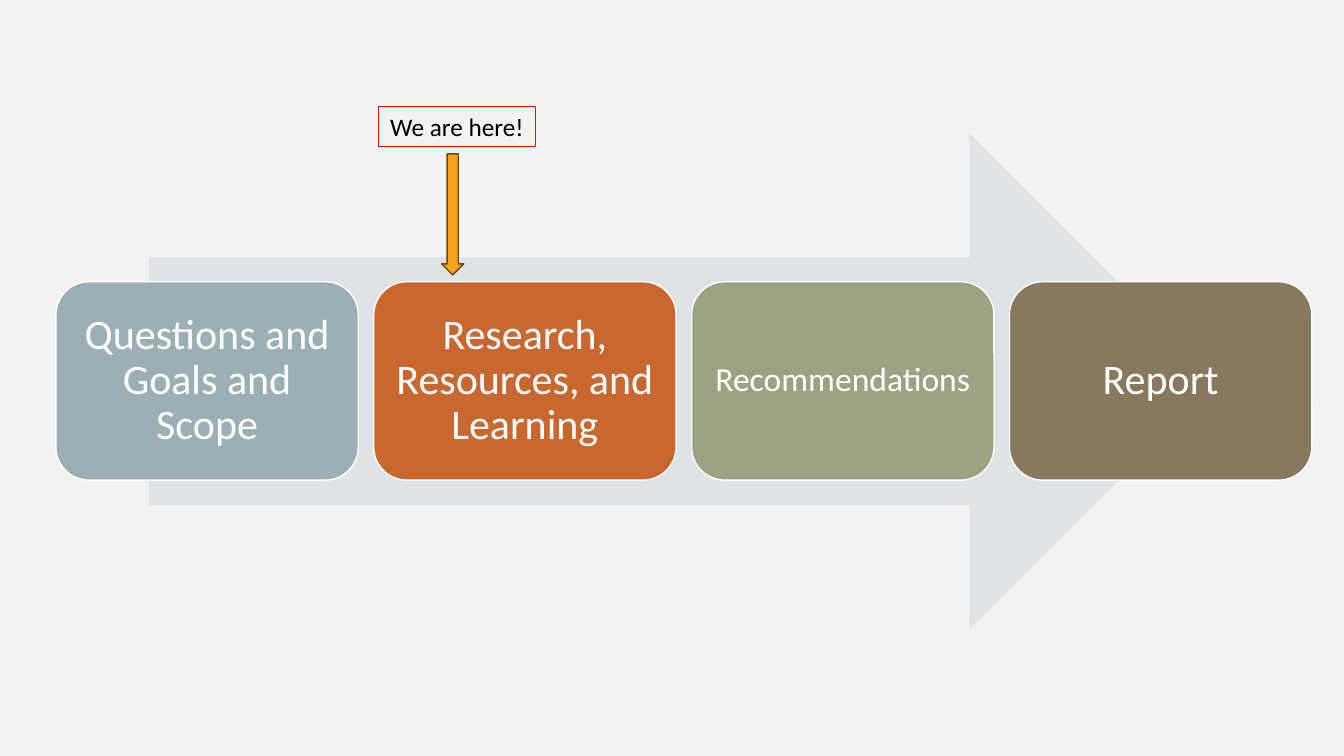
from dataclasses import dataclass

from pptx import Presentation
from pptx.dml.color import RGBColor
from pptx.enum.shapes import MSO_SHAPE
from pptx.enum.text import MSO_ANCHOR, PP_ALIGN
from pptx.util import Cm, Pt


@dataclass(frozen=True)
class Theme:
    font: str = "Calibri"
    back: str = "F2F2F2"
    band: str = "DEE3E5"
    white: str = "FFFFFF"
    black: str = "000000"
    red: str = "FF0000"
    amber: str = "F6A21D"
    brown: str = "6C470D"
    blue: str = "9BAFB5"
    rust: str = "C96731"
    sage: str = "9CA383"
    umber: str = "87795D"
    large: int = 30
    medium: int = 24
    small: int = 18


theme = Theme()


def add_shape(kind, left, top, width, height, fill=None, line=None, weight=1):
    """Add a flat shape, sized in cm; no fill or line colour means none is drawn."""
    shape = slide.shapes.add_shape(kind, Cm(left), Cm(top), Cm(width), Cm(height))
    shape.shadow.inherit = False
    for part, color in ((shape.fill, fill), (shape.line.fill, line)):
        if color:
            part.solid()
            part.fore_color.rgb = RGBColor.from_string(color)
        else:
            part.background()
    if line:
        shape.line.width = Pt(weight)
    return shape


def set_text(shape, text, size, color):
    frame = shape.text_frame
    frame.word_wrap = True
    frame.vertical_anchor = MSO_ANCHOR.MIDDLE
    para = frame.paragraphs[0]
    para.text = text
    para.alignment = PP_ALIGN.CENTER
    para.font.name = theme.font
    para.font.size = Pt(size)
    para.font.color.rgb = RGBColor.from_string(color)
    return frame


deck = Presentation()
deck.slide_width, deck.slide_height = Cm(33.87), Cm(19.05)
slide = deck.slides.add_slide(deck.slide_layouts[6])
slide.background.fill.solid()
slide.background.fill.fore_color.rgb = RGBColor.from_string(theme.back)

# Process band and its steps
add_shape(MSO_SHAPE.RIGHT_ARROW, 3.76, 3.36, 26.92, 12.5, theme.band)

steps = [
    ("Questions and Goals and Scope", theme.blue, theme.large, 0.3),
    ("Research, Resources, and Learning", theme.rust, theme.large, 0.3),
    ("Recommendations", theme.sage, theme.medium, 0.25),
    ("Report", theme.umber, theme.large, 0.3),
]
first, pitch = 1.41, 8.01
for i, (text, color, size, inset) in enumerate(steps):
    box = add_shape(MSO_SHAPE.ROUNDED_RECTANGLE, first + i * pitch, 7.1, 7.62, 5,
                    color, theme.white)
    frame = set_text(box, text, size, theme.white)
    frame.margin_left = frame.margin_right = Cm(inset)
    frame.margin_top = frame.margin_bottom = Cm(inset)
    frame.paragraphs[0].line_spacing = 0.9

# Marker for the current step
add_shape(MSO_SHAPE.DOWN_ARROW, 11.13, 3.88, 0.56, 3.05, theme.amber, theme.brown)
label = add_shape(MSO_SHAPE.RECTANGLE, 9.53, 2.68, 3.97, 1.02,
                  line=theme.red, weight=0.75)
set_text(label, "We are here!", theme.small, theme.black)

deck.save("out.pptx")
